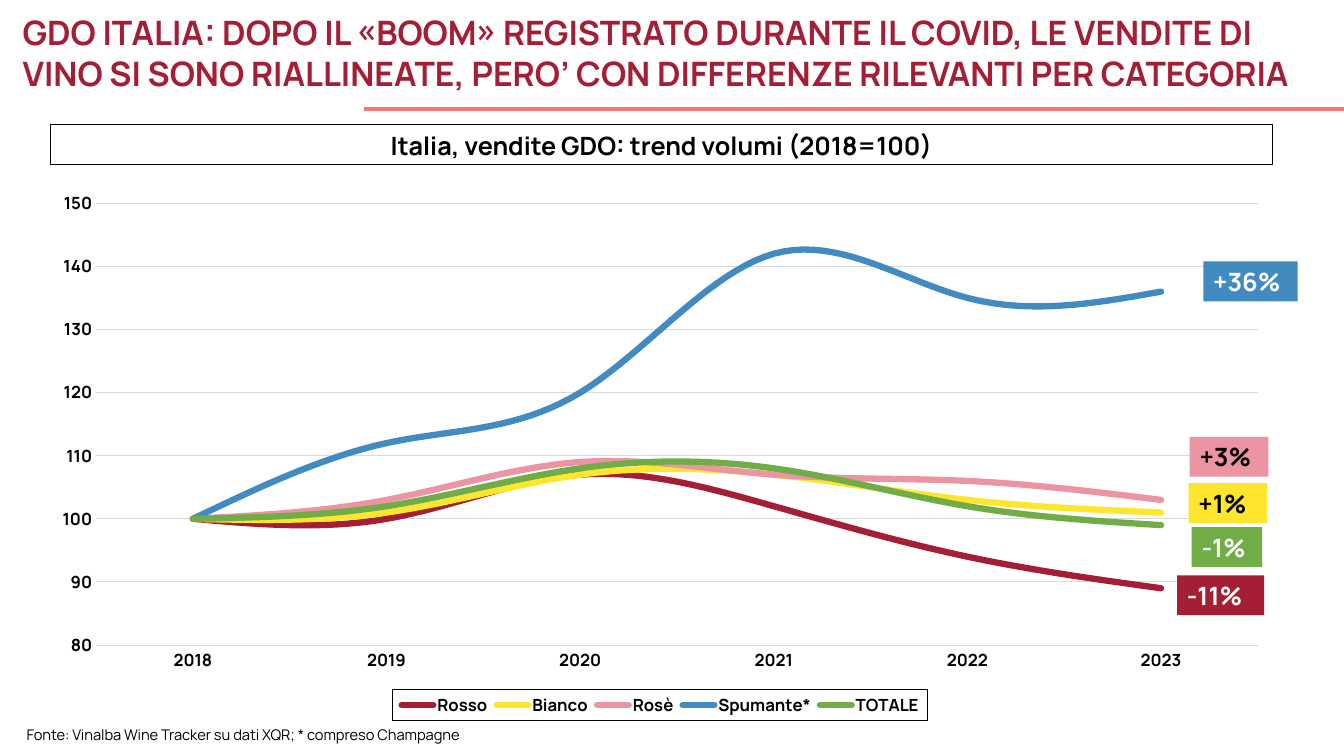
from pptx import Presentation
from pptx.chart.data import CategoryChartData
from pptx.dml.color import RGBColor
from pptx.enum.chart import XL_CHART_TYPE as CT, XL_LEGEND_POSITION as LP, XL_MARKER_STYLE as MS, XL_TICK_MARK as TM
from pptx.enum.shapes import MSO_CONNECTOR as CONN, MSO_SHAPE as SHAPE
from pptx.enum.text import MSO_ANCHOR as ANCHOR, PP_ALIGN as ALIGN
from pptx.oxml import parse_xml
from pptx.oxml.ns import nsdecls, qn
from pptx.util import Pt

PX = 9525
FONT = "Manrope"
BLACK = RGBColor(0x00, 0x00, 0x00)
WHITE = RGBColor(0xFF, 0xFF, 0xFF)
RED = RGBColor(0xA4, 0x1F, 0x35)
YELLOW = RGBColor(0xFF, 0xE6, 0x2E)
PINK = RGBColor(0xEB, 0x95, 0xA3)
BLUE = RGBColor(0x41, 0x8B, 0xC1)
GREEN = RGBColor(0x70, 0xAD, 0x47)
CORAL = RGBColor(0xF8, 0x75, 0x75)
GRID = RGBColor(0xD9, 0xD9, 0xD9)

TITLE = ("GDO ITALIA: DOPO IL «BOOM» REGISTRATO DURANTE IL COVID, LE VENDITE DI VINO "
         "SI SONO RIALLINEATE, PERO’ CON DIFFERENZE RILEVANTI PER CATEGORIA")
SUBTITLE = "Italia, vendite GDO: trend volumi (2018=100)"
SOURCE = "Fonte: Vinalba Wine Tracker su dati XQR; * compreso Champagne"

YEARS = ["2018", "2019", "2020", "2021", "2022", "2023"]
SERIES = [
    ("Rosso", RED, (100, 100, 107, 102, 94, 89)),
    ("Bianco", YELLOW, (100, 101, 107, 107, 103, 101)),
    ("Rosè", PINK, (100, 103, 109, 107, 106, 103)),
    ("Spumante*", BLUE, (100, 112, 120, 142, 135, 136)),
    ("TOTALE", GREEN, (100, 102, 108, 108, 102, 99)),
]
# Text, fill, text colour, then left, top and width within the chart box
CHANGES = [
    ("+36%", BLUE, WHITE, 1109, 77, 90),
    ("-11%", RED, WHITE, 1084, 376, 83),
    ("-1%", GREEN, WHITE, 1098, 330, 67),
    ("+1%", YELLOW, BLACK, 1095, 288, 75),
    ("+3%", PINK, BLACK, 1096, 244, 75),
]


def px(*lengths):
    return [n * PX for n in lengths]


def set_font(font, size, color=BLACK, bold=True):
    for key, value in {"name": FONT, "size": Pt(size), "bold": bold}.items():
        setattr(font, key, value)
    font.color.rgb = color


def set_line(line, color, width):
    line.color.rgb = color
    line.width = Pt(width)


def write(sp, text, size, color=BLACK, bold=True, wrap=True, align=ALIGN.LEFT, anchor=ANCHOR.TOP):
    tf = sp.text_frame
    tf.word_wrap = wrap
    tf.vertical_anchor = anchor
    p = tf.paragraphs[0]
    p.alignment = align
    r = p.add_run()
    r.text = text
    set_font(r.font, size, color, bold)


def add_box(s, box, fill=None):
    sp = s.shapes.add_shape(SHAPE.RECTANGLE, *px(*box))
    sp.shadow.inherit = False
    if fill is None:
        sp.fill.background()
        set_line(sp.line, BLACK, 0.75)
    else:
        sp.fill.solid()
        sp.fill.fore_color.rgb = fill
        sp.line.fill.background()
    return sp


def manual_layout(x, y, w, h, inner=False):
    target = '<c:layoutTarget val="inner"/>' if inner else ""
    return parse_xml(
        f'<c:layout {nsdecls("c")}><c:manualLayout>{target}'
        '<c:xMode val="edge"/><c:yMode val="edge"/>'
        f'<c:x val="{x}"/><c:y val="{y}"/><c:w val="{w}"/><c:h val="{h}"/>'
        '</c:manualLayout></c:layout>')


def add_header(s, x, y, w, h):
    # Rule under the title, running to the slide edge
    rule = s.shapes.add_connector(CONN.STRAIGHT, *px(x + 335, y + 97, 1280, y + 97))
    set_line(rule.line, CORAL, 3)
    rule._element.spPr.append(parse_xml(f'<a:effectLst {nsdecls("a")}/>'))
    # Title
    write(s.shapes.add_textbox(*px(x, y, w, h)), TITLE, 24, RED)


def style_axes(chart):
    cat, val = chart.category_axis, chart.value_axis
    for axis in (cat, val):
        axis.major_tick_mark = axis.minor_tick_mark = TM.NONE
        set_font(axis.tick_labels.font, 12)
    set_line(cat.format.line, GRID, 0.75)
    for key, value in {"minimum_scale": 80, "maximum_scale": 150, "major_unit": 10}.items():
        setattr(val, key, value)
    val.format.line.fill.background()
    set_line(val.major_gridlines.format.line, GRID, 0.75)


def style_legend(chart):
    chart.has_legend = True
    legend = chart.legend
    legend.position = LP.BOTTOM
    legend.include_in_layout = False
    set_font(legend.font, 12)
    el = legend._element
    for old in el.findall(qn("c:layout")):
        el.remove(old)
    el.find(qn("c:overlay")).addprevious(manual_layout(0.284, 0.942, 0.43, 0.06))
    el.find(qn("c:txPr")).addprevious(parse_xml(
        f'<c:spPr {nsdecls("c", "a")}><a:ln w="9525"><a:solidFill>'
        f'<a:srgbClr val="{BLACK}"/></a:solidFill></a:ln></c:spPr>'))


def add_trend(s, x, y, w, h):
    # Line chart
    data = CategoryChartData()
    data.categories = YEARS
    for name, _, values in SERIES:
        data.add_series(name, values)
    chart = s.shapes.add_chart(CT.LINE, *px(x, y, w, h), data).chart
    chart.has_title = False
    set_font(chart.font, 10, bold=False)
    plot = chart.plots[0]
    plot.vary_by_categories = False
    for ser, (_, color, _) in zip(plot.series, SERIES):
        ser.smooth = True
        ser.marker.style = MS.NONE
        set_line(ser.format.line, color, 4.5)
        ser.format.line._get_or_add_ln().set("cap", "rnd")
    style_axes(chart)
    style_legend(chart)
    area = chart._chartSpace.chart.plotArea
    for old in area.findall(qn("c:layout")):
        area.remove(old)
    area.insert(0, manual_layout(0.046, 0.042, 0.933, 0.818, inner=True))

    # Change since 2018 beside each line
    for text, fill, color, left, top, width in CHANGES:
        sp = add_box(s, (x + left, y + top, width, 38), fill)
        write(sp, text, 18, color, wrap=False, anchor=ANCHOR.MIDDLE)


def build_slide(prs):
    s = prs.slides.add_slide(prs.slide_layouts[6])
    add_header(s, 12, 7, 1254, 125)
    add_trend(s, 37, 172, 1186, 515)
    # Chart heading
    write(add_box(s, (48, 119, 1164, 38)), SUBTITLE, 18,
          align=ALIGN.CENTER, anchor=ANCHOR.MIDDLE)
    # Source note
    write(s.shapes.add_textbox(*px(16, 687, 488, 26)), SOURCE, 10.5, bold=False, wrap=False)


def main():
    prs = Presentation()
    prs.slide_width, prs.slide_height = px(1280, 720)
    build_slide(prs)
    prs.save("out.pptx")


if __name__ == "__main__":
    main()
